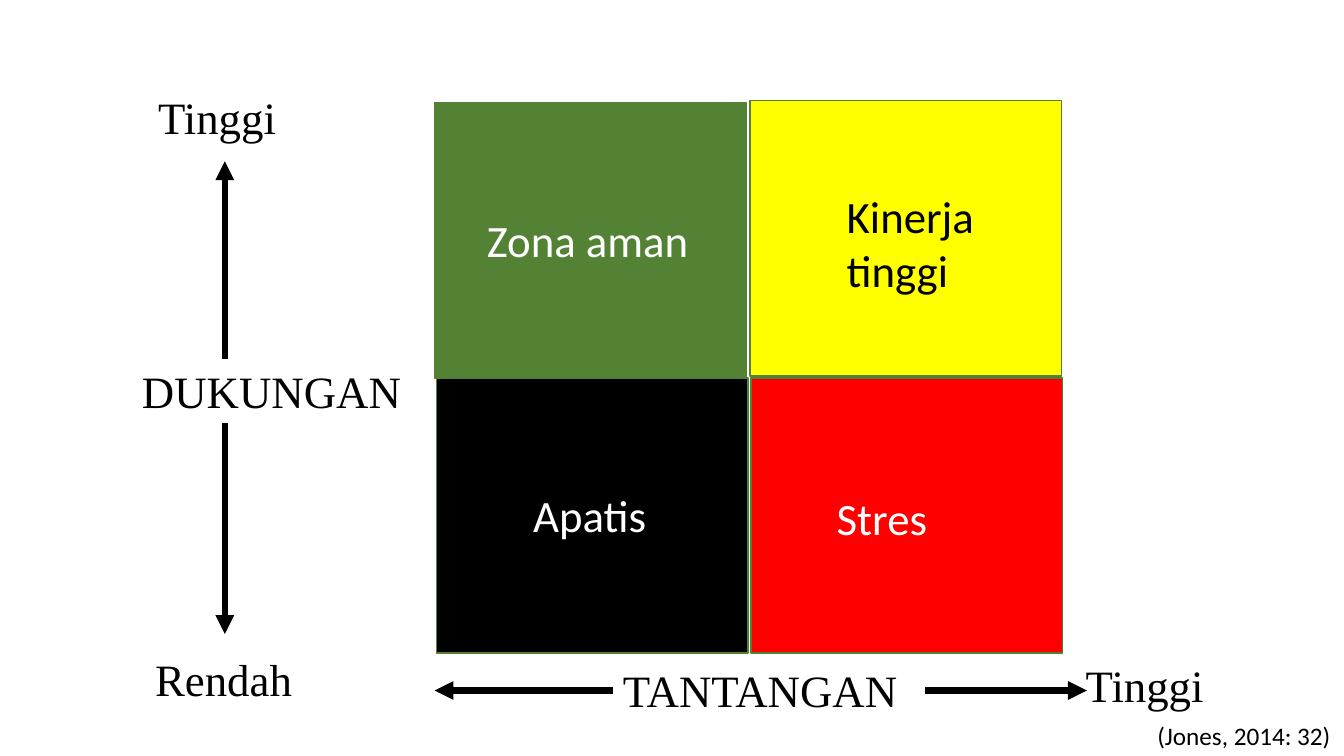
from lxml import etree
from pptx import Presentation
from pptx.dml.color import RGBColor
from pptx.enum.shapes import MSO_CONNECTOR, MSO_SHAPE
from pptx.oxml.ns import qn
from pptx.util import Inches, Pt

RECT = MSO_SHAPE.RECTANGLE
STRAIGHT = MSO_CONNECTOR.STRAIGHT
SERIF = "Times New Roman"
SANS = "Calibri"
COLORS = {
    "black": "000000",
    "white": "FFFFFF",
    "green": "548235",
    "edge": "538035",
    "yellow": "FFFF00",
    "red": "FF0000",
}


def color(name):
    return RGBColor.from_string(COLORS[name])


def add_text(slide, text, box, font=SERIF, size=32, ink="black"):
    frame = slide.shapes.add_textbox(*map(Inches, box)).text_frame
    frame.word_wrap = True
    run = frame.paragraphs[0].add_run()
    run.text = text
    run.font.name = font
    run.font.size = Pt(size)
    run.font.color.rgb = color(ink)


def add_arrow(slide, start, end):
    arrow = slide.shapes.add_connector(STRAIGHT, *map(Inches, start + end))
    arrow.line.color.rgb = color("black")
    arrow.line.width = Pt(4.5)
    etree.SubElement(arrow.line._get_or_add_ln(), qn("a:tailEnd"), type="triangle")
    etree.SubElement(arrow._element.spPr, qn("a:effectLst"))


def add_zone(slide, box, fill, text, label, ink="white"):
    """Draw one quadrant; label is its text box relative to the quadrant."""
    zone = slide.shapes.add_shape(RECT, *map(Inches, box))
    zone.shadow.inherit = False
    zone.fill.solid()
    zone.fill.fore_color.rgb = color(fill)
    zone.line.color.rgb = color("edge")
    zone.line.width = Pt(1)
    dx, dy, width, height = label
    add_text(slide, text, (box[0] + dx, box[1] + dy, width, height),
             font=SANS, ink=ink)


def add_grid(slide, box):
    """Draw the four zones, two by two, with their slight offsets."""
    left, top, width, height = box
    zones = [
        (0, 0, "green", "Zona aman", (0.42, 1.04, 2.69, 0.64), "white"),
        (0.02, height, "black", "Apatis", (0.86, 1.04, 1.34, 0.64), "white"),
        (width + 0.05, height, "red", "Stres", (0.75, 1.07, 1.34, 0.64), "white"),
        (width + 0.04, -0.02, "yellow", "Kinerja tinggi",
         (0.86, 0.82, 1.67, 1.18), "black"),
    ]
    for dx, dy, fill, text, label, ink in zones:
        add_zone(slide, (left + dx, top + dy, width, height),
                 fill, text, label, ink)


def add_support(slide, box):
    """Draw the vertical axis: labels at both ends, title in the middle."""
    left, top, width, height = box
    mid = left + 0.92
    add_text(slide, "Tinggi", (left + 0.16, top, 1.93, 0.64))
    add_text(slide, "DUKUNGAN", (left, top + 2.72, width, 0.64))
    add_text(slide, "Rendah", (left + 0.13, top + height - 0.64, 1.93, 0.64))
    add_arrow(slide, (mid, top + 2.72), (mid, top + 0.76))
    add_arrow(slide, (mid, top + 3.36), (mid, top + height - 0.77))


def add_demand(slide, box):
    """Draw the horizontal axis: title in the middle, label at the right."""
    left, top, width, height = box
    mid = top + 0.37
    add_text(slide, "TANTANGAN", (left + 1.77, top + 0.05, 3.09, 0.64))
    add_text(slide, "Tinggi", (left + width - 1.93, top, 1.93, height))
    add_arrow(slide, (left + 1.77, mid), (left, mid))
    add_arrow(slide, (left + 4.86, mid), (left + 6.47, mid))


def main():
    deck = Presentation()
    deck.slide_width = Inches(13.33)
    deck.slide_height = Inches(7.5)
    slide = deck.slides.add_slide(deck.slide_layouts[6])
    add_grid(slide, (4.31, 1.02, 3.09, 2.73))
    add_support(slide, (1.31, 0.84, 2.78, 6.22))
    add_demand(slide, (4.31, 6.48, 8.29, 0.64))
    add_text(slide, "(Jones, 2014: 32)", (11.38, 7.1, 2.08, 0.4),
             font=SANS, size=18)
    deck.save("out.pptx")


if __name__ == "__main__":
    main()
